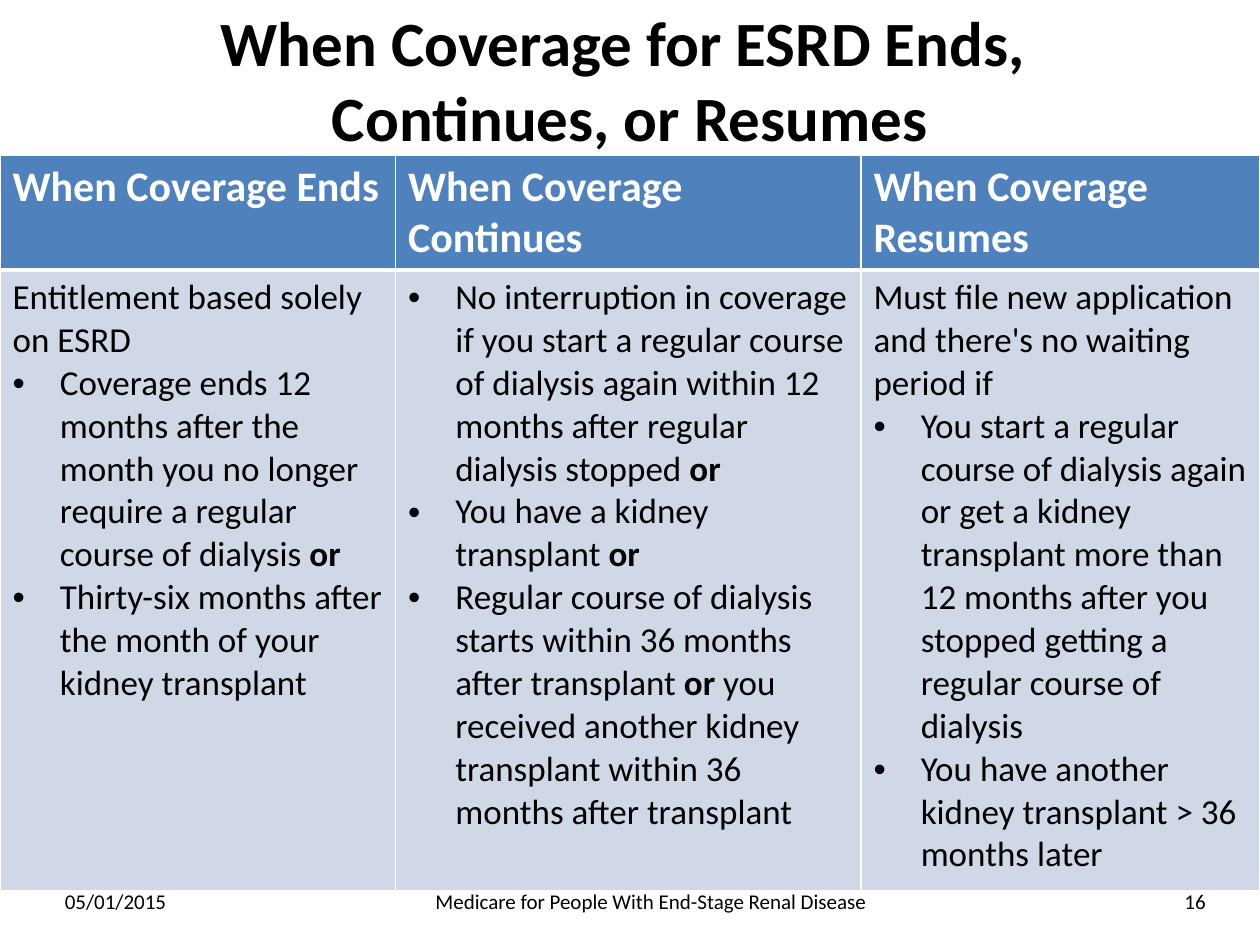
from lxml.etree import SubElement
from pptx import Presentation
from pptx.dml.color import RGBColor
from pptx.enum.text import MSO_ANCHOR, MSO_AUTO_SIZE, PP_ALIGN
from pptx.oxml.ns import qn
from pptx.util import Pt

BLACK = RGBColor(0x00, 0x00, 0x00)
WHITE = RGBColor(0xFF, 0xFF, 0xFF)
HEADER_BLUE = RGBColor(0x4F, 0x81, 0xBD)
BODY_BLUE = RGBColor(0xD0, 0xD8, 0xE8)
FONT = "Calibri"
BULLET_INDENT = Pt(27)

# "**" switches bold on and off; a leading "•" makes a bulleted paragraph.
COVERAGE = {
    "When Coverage Ends": [
        "Entitlement based solely on ESRD",
        "•Coverage ends 12 months after the month you no longer require "
        "a regular course of dialysis **or**",
        "•Thirty-six months after the month of your kidney transplant",
    ],
    "When Coverage Continues": [
        "•No interruption in coverage if you start a regular course of dialysis "
        "again within 12 months after regular dialysis stopped **or**",
        "•You have a kidney transplant **or**",
        "•Regular course of dialysis starts within 36 months after transplant "
        "**or **you received another kidney transplant within 36 months after transplant",
    ],
    "When Coverage Resumes": [
        "Must file new application and there's no waiting period if",
        "•You start a regular course of dialysis again or get a kidney transplant "
        "more than 12 months after you stopped getting a regular course of dialysis",
        "•You have another kidney transplant > 36 months later",
    ],
}


def add_bullet(paragraph):
    properties = paragraph._p.get_or_add_pPr()
    properties.set("marL", str(BULLET_INDENT))
    properties.set("indent", str(-BULLET_INDENT))
    SubElement(properties, qn("a:buFont"), typeface="Arial")
    SubElement(properties, qn("a:buChar"), char="•")


def write(paragraph, text, size=12, color=BLACK, bold=False, align=PP_ALIGN.LEFT):
    """Fill a paragraph, reading the bullet and bold marks in the text."""
    paragraph.alignment = align
    if text.startswith("•"):
        add_bullet(paragraph)
        text = text[1:]
    for index, part in enumerate(text.split("**")):
        if not part:
            continue
        for line_index, line in enumerate(part.split("\n")):
            if line_index:
                paragraph.add_line_break()
            run = paragraph.add_run()
            run.text = line
            run.font.name = FONT
            run.font.size = Pt(size)
            run.font.color.rgb = color
            run.font.bold = bold or index % 2 == 1


def set_borders(cell, **widths):
    """Draw white cell borders; widths are points keyed by side: L, R, T, B."""
    properties = cell._tc.get_or_add_tcPr()
    for side, width in widths.items():
        line = SubElement(properties, qn(f"a:ln{side}"), w=str(Pt(width)))
        fill = SubElement(line, qn("a:solidFill"))
        SubElement(fill, qn("a:srgbClr"), val=str(WHITE))


class SlideBuilder:
    """Holds the current slide and adds its elements, measured in points."""

    def __init__(self, slide):
        self.slide = slide

    def title(self, text, left, top, width, height):
        title = self.slide.shapes.title
        title.left, title.top = Pt(left), Pt(top)
        title.width, title.height = Pt(width), Pt(height)
        frame = title.text_frame
        frame.auto_size = MSO_AUTO_SIZE.NONE
        frame.vertical_anchor = MSO_ANCHOR.MIDDLE
        write(frame.paragraphs[0], text, size=36, bold=True, align=PP_ALIGN.CENTER)

    def cell(self, cell, lines, fill, top, bottom, **text_format):
        set_borders(cell, L=1, R=1, T=top, B=bottom)
        cell.fill.solid()
        cell.fill.fore_color.rgb = fill
        frame = cell.text_frame
        for index, line in enumerate(lines):
            paragraph = frame.add_paragraph() if index else frame.paragraphs[0]
            write(paragraph, line, **text_format)

    def table(self, columns, left, top, widths, heights):
        table = self.slide.shapes.add_table(
            len(heights), len(widths), Pt(left), Pt(top), Pt(sum(widths)), Pt(sum(heights))
        ).table
        table.horz_banding = False
        for row, height in zip(table.rows, heights):
            row.height = Pt(height)
        for index, (heading, details) in enumerate(columns.items()):
            table.columns[index].width = Pt(widths[index])
            self.cell(table.cell(0, index), [heading], HEADER_BLUE, top=1, bottom=3,
                      size=24, color=WHITE, bold=True)
            self.cell(table.cell(1, index), details, BODY_BLUE, top=3, bottom=1, size=20)

    def footer(self, text, left, width, height, align):
        box = self.slide.shapes.add_textbox(Pt(left), Pt(504), Pt(width), Pt(height))
        box.text_frame.word_wrap = True
        write(box.text_frame.paragraphs[0], text, align=align)


def main():
    presentation = Presentation()
    presentation.slide_width, presentation.slide_height = Pt(720), Pt(540)
    title_only = presentation.slide_layouts[5]
    builder = SlideBuilder(presentation.slides.add_slide(title_only))

    builder.title("When Coverage for ESRD Ends, \nContinues, or Resumes", 0, 0, 720, 90)
    builder.table(COVERAGE, 0, 88.5, widths=[226, 266, 228], heights=[65, 355])
    builder.footer("05/01/2015", 30, 174, 36, PP_ALIGN.LEFT)
    builder.footer("Medicare for People With End-Stage Renal Disease", 180, 384, 42,
                   PP_ALIGN.CENTER)
    builder.footer("16", 528, 168, 42, PP_ALIGN.RIGHT)

    presentation.save("out.pptx")


if __name__ == "__main__":
    main()
